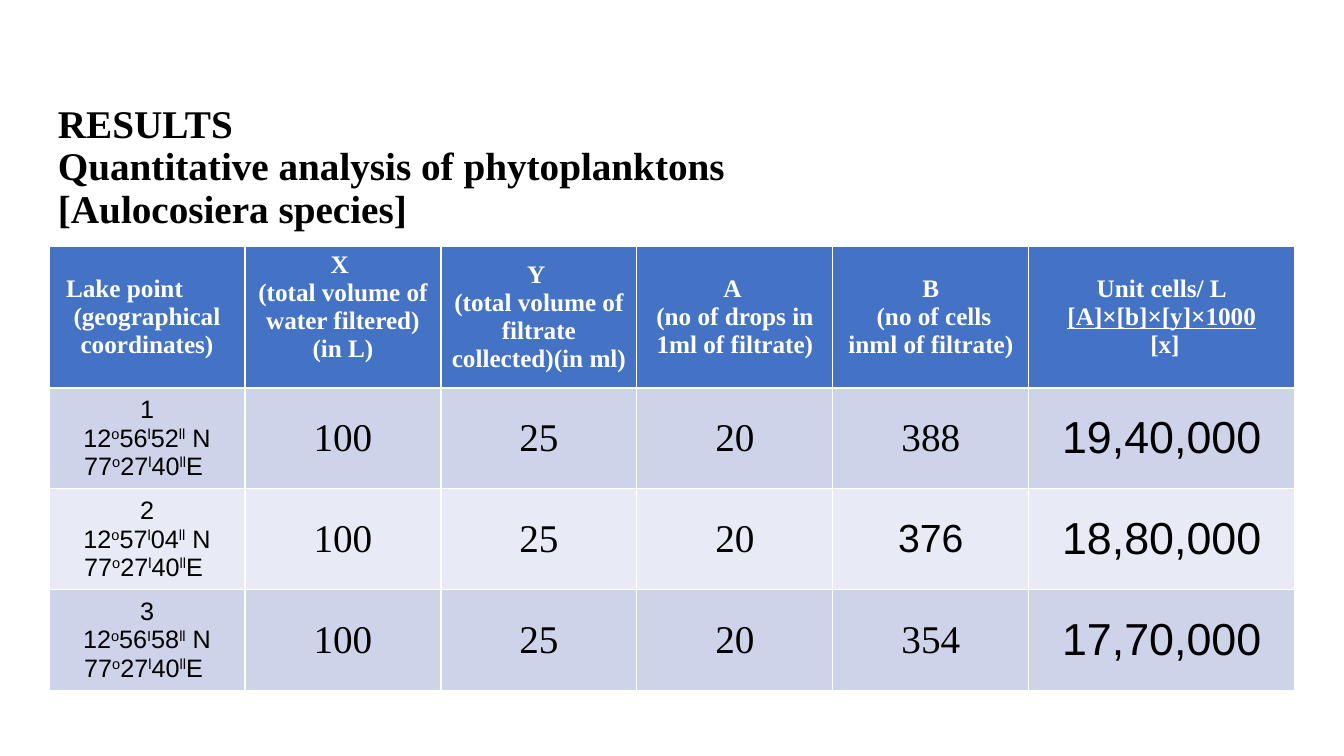
from dataclasses import dataclass

from pptx import Presentation
from pptx.dml.color import RGBColor
from pptx.enum.text import MSO_ANCHOR as ANCHOR, PP_ALIGN as ALIGN
from pptx.util import Pt

# Content: ^ switches superscript on and off, _ switches underline
TITLE = "RESULTS\vQuantitative analysis of phytoplanktons \v[Aulocosiera species]"
HEADERS = [
    ["Lake point", "(geographical coordinates)"],
    ["X ", "(total volume of water filtered)(in L)"],
    ["Y ", "(total volume of filtrate collected)(in ml)"],
    ["A ", "(no of drops in 1ml of filtrate)"],
    ["B", " (no of cells inml of filtrate)"],
    ["Unit cells/ L", " _[A]×[b]×[y]×1000_ ", " [x]"],
]
EAST = "77^o^27^l^40^ll^E "
SAMPLES = [
    (["1", "12^o^56^l^52^ll^ N", EAST], "100", "25", "20", "388", "19,40,000"),
    (["2", "12^o^57^l^04^ll^ N", EAST], "100", "25", "20", "376", "18,80,000"),
    (["3", "12^o^56^I^58^ll^ N", EAST], "100", "25", "20", "354", "17,70,000"),
]
SANS_COUNTS = {"376"}


@dataclass(frozen=True)
class Theme:
    serif: str = "Times New Roman"
    sans: str = "Arial"
    black: str = "000000"
    white: str = "FFFFFF"
    header: str = "4472C4"
    bands: tuple = ("CDD4EA", "E8EBF5")
    small: int = 18
    medium: int = 28
    large: int = 32


T = Theme()

# Layout in px
SCALE = 914400 / 100.8
SLIDE = (1344, 756)
TITLE_BOX = (48, 51, 1082, 234)
TABLE_AT = (49, 246)
COLS = [196] * 5 + [266]
ROWS = [142] + [94] * len(SAMPLES)
LAKE_INDENT = 7


def px(n):
    return round(n * SCALE)


def style(p, face, size, color, bold=False):
    p.font.name, p.font.size, p.font.bold = face, Pt(size), bold
    p.font.color.rgb = RGBColor.from_string(color)


def add_marked(p, text):
    mark = "_" if "_" in text else "^"
    for i, part in enumerate(text.split(mark)):
        r = p.add_run()
        r.text = part
        if i % 2 and mark == "_":
            r.font.underline = True
        elif i % 2:
            r.font._element.set("baseline", "30000")


def fill_cell(cell, lines, fill, *font, anchor=ANCHOR.MIDDLE):
    cell.fill.solid()
    cell.fill.fore_color.rgb = RGBColor.from_string(fill)
    cell.vertical_anchor = anchor
    tf = cell.text_frame
    for i, line in enumerate(lines):
        p = tf.add_paragraph() if i else tf.paragraphs[0]
        p.alignment = ALIGN.CENTER
        add_marked(p, line)
        style(p, *font)


prs = Presentation()
prs.slide_width, prs.slide_height = map(px, SLIDE)
s = prs.slides.add_slide(prs.slide_layouts[6])

# Title
tf = s.shapes.add_textbox(*map(px, TITLE_BOX)).text_frame
tf.word_wrap = True
tf.vertical_anchor = ANCHOR.MIDDLE
p = tf.paragraphs[0]
p.text = TITLE
p.line_spacing = 0.9
style(p, T.serif, T.medium, T.black, True)

# Table grid
box = map(px, (*TABLE_AT, sum(COLS), sum(ROWS)))
table = s.shapes.add_table(len(ROWS), len(COLS), *box).table
table.horz_banding = False
for column, width in zip(table.columns, COLS):
    column.width = px(width)
for row, height in zip(table.rows, ROWS):
    row.height = px(height)

# Header row
for c, lines in enumerate(HEADERS):
    anchor = ANCHOR.TOP if c == 1 else ANCHOR.MIDDLE
    fill_cell(table.cell(0, c), lines, T.header,
              T.serif, T.small, T.white, True, anchor=anchor)
p = table.cell(0, 0).text_frame.paragraphs[0]
p.alignment = ALIGN.LEFT
p._p.get_or_add_pPr().set("marL", str(px(LAKE_INDENT)))

# Sample rows
for r, (place, *counts, total) in enumerate(SAMPLES, 1):
    band = T.bands[(r - 1) % 2]
    fill_cell(table.cell(r, 0), place, band, T.sans, T.small, T.black)
    for c, count in enumerate(counts, 1):
        face = T.sans if count in SANS_COUNTS else T.serif
        fill_cell(table.cell(r, c), [count], band, face, T.medium, T.black)
    fill_cell(table.cell(r, len(COLS) - 1), [total], band, T.sans, T.large, T.black)

prs.save("out.pptx")
